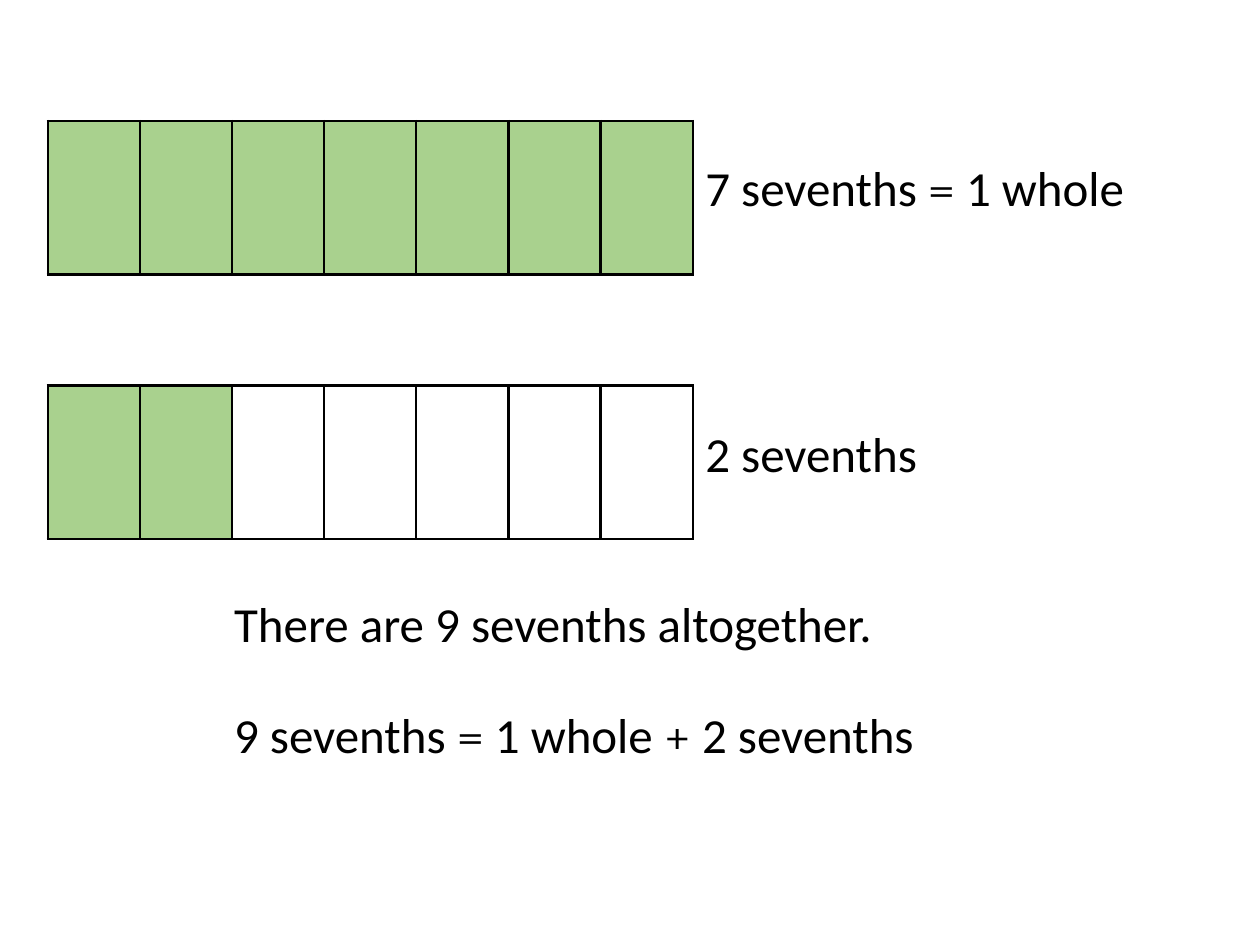
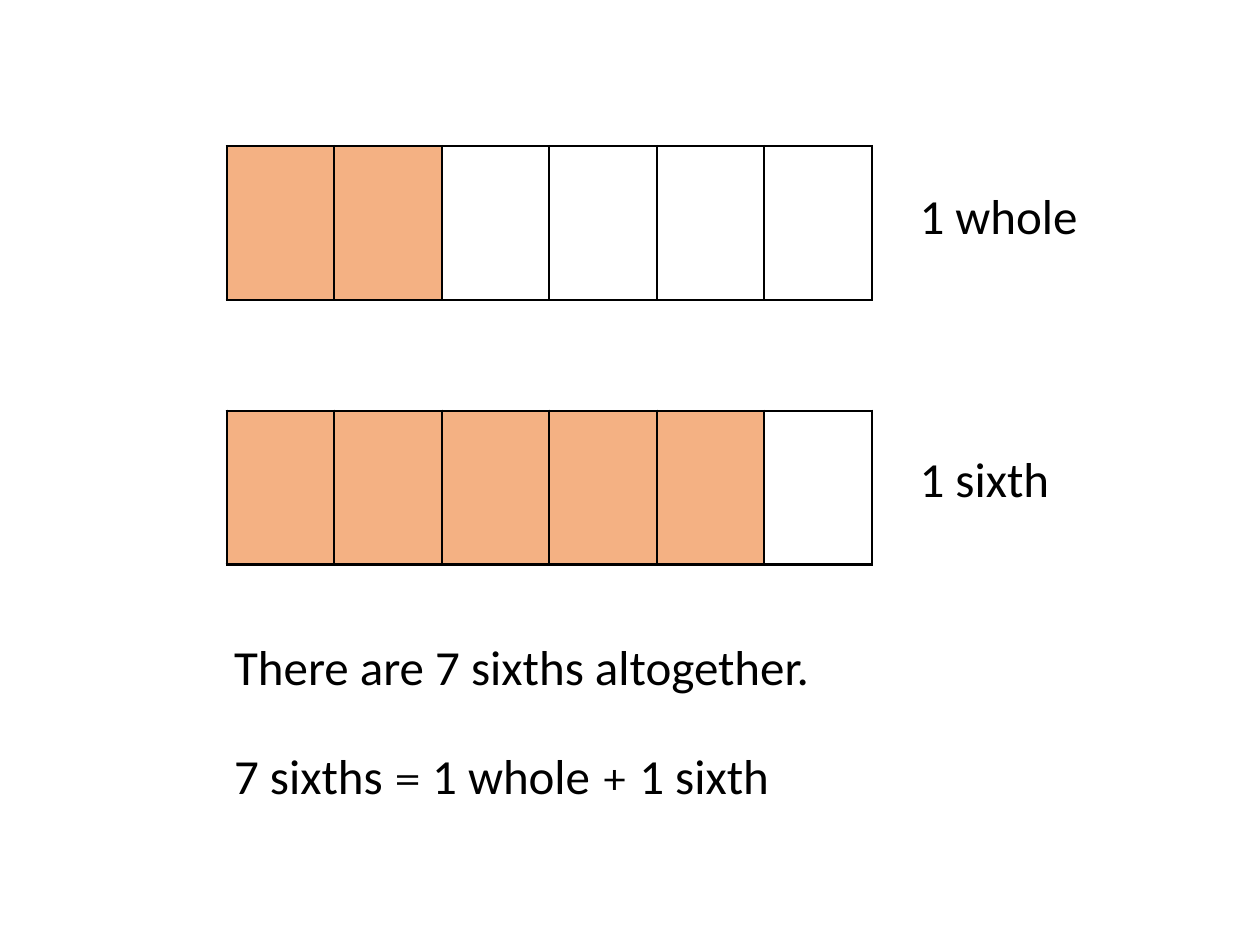
from itertools import groupby

from lxml.etree import SubElement
from pptx import Presentation
from pptx.dml.color import RGBColor
from pptx.enum.text import MSO_AUTO_SIZE as AutoSize
from pptx.oxml.ns import qn
from pptx.util import Pt

COLORS = {"ink": "000000", "sevenths": "A9D18E", "sixths": "F4B183"}
WORD_FONT, SYMBOL_FONT = "Calibri", "Cambria"
BAR_WIDTH, BAR_HEIGHT = 368.64, 87.84
BORDER = 1.5
SENTENCE_LEFT, LINE_HEIGHT = 126.72, 41.04


def outline_part(part):
    """Draw a solid border on all four sides of a bar part."""
    properties = part._tc.get_or_add_tcPr()
    for position, side in enumerate(("a:lnL", "a:lnR", "a:lnT", "a:lnB")):
        border = properties.makeelement(qn(side), w=str(Pt(BORDER)))
        stroke = SubElement(border, qn("a:solidFill"))
        SubElement(stroke, qn("a:srgbClr"), val=COLORS["ink"])
        properties.insert(position, border)


def add_fraction_bar(slide, left, top, parts, part_width, shaded, color):
    """Add a one-row table of equal parts, filling the shaded ones."""
    frame = slide.shapes.add_table(
        1, parts, Pt(left), Pt(top), Pt(part_width * parts), Pt(BAR_HEIGHT))
    bar = frame.table
    bar.first_row = bar.horz_banding = False
    bar.rows[0].height = Pt(BAR_HEIGHT)
    for index, column in enumerate(bar.columns):
        column.width = Pt(part_width)
        part = bar.cell(0, index)
        if index in shaded:
            part.fill.solid()
            part.fill.fore_color.rgb = RGBColor.from_string(COLORS[color])
        else:
            part.fill.background()
        outline_part(part)


def add_statement(slide, left, top, width, wording):
    """Add one line of text, with its = and + signs in the symbol font."""
    box = slide.shapes.add_textbox(Pt(left), Pt(top), Pt(width), Pt(LINE_HEIGHT))
    box.text_frame.word_wrap = False
    box.text_frame.auto_size = AutoSize.SHAPE_TO_FIT_TEXT
    line = box.text_frame.paragraphs[0]
    for is_symbol, letters in groupby(wording, key=lambda letter: letter in "=+"):
        run = line.add_run()
        run.text = "".join(letters)
        run.font.name = SYMBOL_FONT if is_symbol else WORD_FONT
        run.font.size = Pt(28)
        run.font.color.rgb = RGBColor.from_string(COLORS["ink"])


def build_sevenths(slide):
    """Show nine sevenths as one whole and two sevenths."""
    for top, shaded_count in ((69.12, 7), (220.32, 2)):
        add_fraction_bar(slide, 27.36, top, 7, BAR_WIDTH / 7,
                         range(shaded_count), "sevenths")
    add_statement(slide, 396, 86.4, 262.08, "7 sevenths = 1 whole")
    add_statement(slide, 396, 238.32, 136.8, "2 sevenths")
    add_statement(slide, SENTENCE_LEFT, 335.52, 383.04,
                  "There are 9 sevenths altogether.")
    add_statement(slide, SENTENCE_LEFT, 398.88, 418.32,
                  "9 sevenths = 1 whole + 2 sevenths")


def build_sixths(slide):
    """Show seven sixths, with a four-part strip laid over the lower bar."""
    for top, parts, shaded in ((83.52, 6, range(2)), (234.72, 6, [4]),
                               (234.72, 4, range(4))):
        add_fraction_bar(slide, 129.6, top, parts, BAR_WIDTH / 6, shaded, "sixths")
    add_statement(slide, 518.4, 102.24, 105.84, "1 whole")
    add_statement(slide, 518.4, 252.72, 89.28, "1 sixth")
    add_statement(slide, SENTENCE_LEFT, 360, 346.32,
                  "There are 7 sixths altogether.")
    add_statement(slide, SENTENCE_LEFT, 422.64, 334.8,
                  "7 sixths = 1 whole + 1 sixth")


def main():
    """Build and save both slides."""
    deck = Presentation()
    deck.slide_width, deck.slide_height = Pt(720), Pt(540)
    blank = deck.slide_layouts[6]
    for build in (build_sevenths, build_sixths):
        build(deck.slides.add_slide(blank))
    deck.save("out.pptx")


if __name__ == "__main__":
    main()
